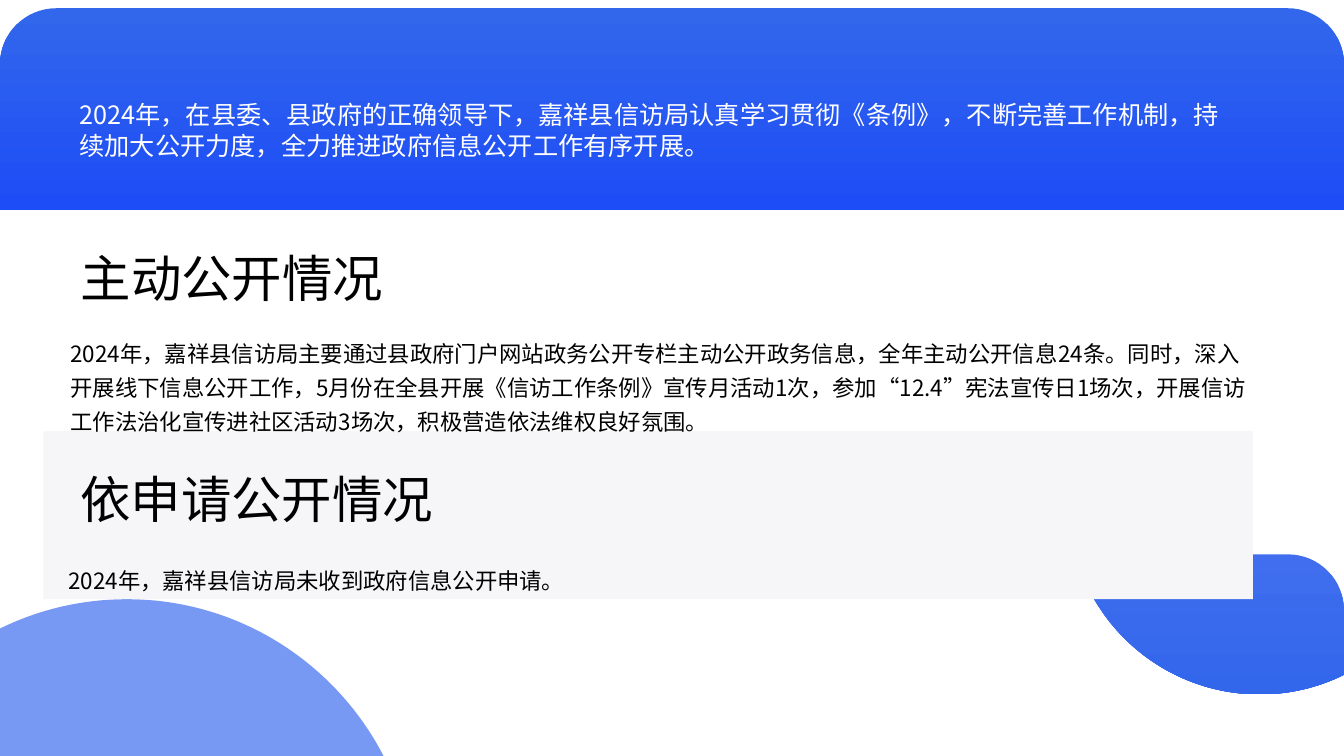
from itertools import chain

from lxml import etree
from pptx import Presentation
from pptx.dml.color import RGBColor
from pptx.enum.lang import MSO_LANGUAGE_ID as Language
from pptx.enum.shapes import MSO_SHAPE as Shape
from pptx.enum.text import MSO_ANCHOR as Anchor, MSO_AUTO_SIZE as AutoSize, PP_ALIGN as Align
from pptx.oxml.ns import qn
from pptx.util import Pt

WIDTH, HEIGHT = 960, 540
FONT = "Noto Sans CJK SC"
WHITE = RGBColor(0xFF, 0xFF, 0xFF)
BLACK = RGBColor(0x00, 0x00, 0x00)
PANEL = RGBColor(0xF6, 0xF6, 0xF9)
BLUE = RGBColor(0x32, 0x66, 0xEB)
DEEP_BLUE = RGBColor(0x1D, 0x4D, 0xF6)
SOFT_BLUE = RGBColor(0x40, 0x6E, 0xEE)

INTRO = "2024年，在县委、县政府的正确领导下，嘉祥县信访局认真学习贯彻《条例》，不断完善工作机制，持续加大公开力度，全力推进政府信息公开工作有序开展。"
ACTIVE_TITLE = "主动公开情况"
ACTIVE_TEXT = "2024年，嘉祥县信访局主要通过县政府门户网站政务公开专栏主动公开政务信息，全年主动公开信息24条。同时，深入开展线下信息公开工作，5月份在全县开展《信访工作条例》宣传月活动1次，参加“12.4”宪法宣传日1场次，开展信访工作法治化宣传进社区活动3场次，积极营造依法维权良好氛围。"
REQUEST_TITLE = "依申请公开情况"
REQUEST_TEXT = "2024年，嘉祥县信访局未收到政府信息公开申请。"


def add_outline(page, start, *segments):
    builder = page.shapes.build_freeform(*map(Pt, start))
    builder.add_line_segments([(Pt(x), Pt(y)) for x, y in chain(*segments)], close=True)
    outline = builder.convert_to_shape()
    bend_segments(outline, segments)
    outline.shadow.inherit = False
    outline.line.fill.background()
    return outline


def bend_segments(outline, segments):
    steps = iter(list(outline._element.iter(qn("a:lnTo"))))
    for segment in segments:
        group = [next(steps) for _ in segment]
        if len(group) == 3:
            bend = etree.Element(qn("a:cubicBezTo"))
            group[0].addprevious(bend)
            for step in group:
                bend.append(step[0])
                step.getparent().remove(step)


def fill_downward(shape, top, bottom):
    shape.fill.gradient()
    shape.fill.gradient_angle = 270
    for stop, color in zip(shape.fill.gradient_stops, (top, bottom)):
        stop.color.rgb = color


def fill_translucent(shape, color, percent):
    shape.fill.solid()
    shape.fill.fore_color.rgb = color
    srgb = shape.fill._xPr.find(".//" + qn("a:srgbClr"))
    etree.SubElement(srgb, qn("a:alpha")).set("val", str(percent * 1000))


def add_panel(page, left, top, width, height):
    panel = page.shapes.add_shape(Shape.RECTANGLE, Pt(left), Pt(top), Pt(width), Pt(height))
    panel.shadow.inherit = False
    panel.fill.solid()
    panel.fill.fore_color.rgb = PANEL
    panel.line.fill.background()


def write_text(box, text, size, spacing, color=BLACK, inset=(0, 0)):
    frame = box.text_frame
    frame.word_wrap = True
    frame.auto_size = AutoSize.NONE
    frame.vertical_anchor = Anchor.TOP
    frame.margin_left = frame.margin_right = Pt(inset[0])
    frame.margin_top = frame.margin_bottom = Pt(inset[1])
    para = frame.paragraphs[0]
    para.alignment = Align.LEFT
    para.line_spacing = Pt(spacing)
    para.space_before = Pt(0)
    span = para.add_run()
    span.text = text
    font = span.font
    font.size = Pt(size)
    font.name = FONT
    font.color.rgb = color
    font.language_id = Language.SIMPLIFIED_CHINESE
    etree.SubElement(font._element, qn("a:ea")).set("typeface", FONT)


def add_text(page, left, top, width, height, *content, **style):
    box = page.shapes.add_textbox(Pt(left), Pt(top), Pt(width), Pt(height))
    write_text(box, *content, **style)


def set_title(page, left, top, width, height, *content):
    title = page.shapes.title
    title.left, title.top, title.width, title.height = map(Pt, (left, top, width, height))
    write_text(title, *content)


def add_background(page):
    banner = add_outline(
        page,
        (0, 46),
        [(0, 23.8), (18, 5.9), (40.3, 5.9)],
        [(919.7, 5.9)],
        [(942, 5.9), (WIDTH, 23.8), (WIDTH, 46)],
        [(WIDTH, 150)],
        [(0, 150)],
    )
    fill_downward(banner, BLUE, DEEP_BLUE)

    bowl = add_outline(
        page,
        (768, 396),
        [(920, 396)],
        [(942.2, 396), (WIDTH, 414), (WIDTH, 436.3)],
        [(WIDTH, 482)],
        [(941.8, 491), (921.5, 496), (900, 496)],
        [(837, 496), (784, 453.6), (768, 396)],
    )
    fill_downward(bowl, SOFT_BLUE, BLUE)

    hill = add_outline(
        page,
        (274, HEIGHT),
        [(0, HEIGHT)],
        [(0, 449)],
        [(27.4, 435.5), (58.3, 428), (90.7, 428)],
        [(170.6, 428), (239.8, 473.8), (274, HEIGHT)],
    )
    fill_translucent(hill, SOFT_BLUE, 70)


def main():
    deck = Presentation()
    deck.slide_width, deck.slide_height = Pt(WIDTH), Pt(HEIGHT)
    page = deck.slides.add_slide(deck.slide_layouts[5])
    inset = (7.2, 3.6)
    add_background(page)
    set_title(page, 57.6, 170.6, 880, 60, ACTIVE_TITLE, 36, 49)
    add_panel(page, 31, 308, 864, 120)
    add_text(page, 50.4, 238.4, 845, 91.4, ACTIVE_TEXT, 16, 24)
    add_text(page, 49.7, 67.2, 845, 51, INTRO, 18, 22, color=WHITE, inset=inset)
    add_text(page, 50.2, 330.5, 400, 65.5, REQUEST_TITLE, 36, 43.8, inset=inset)
    add_text(page, 41.8, 401, 643, 45, REQUEST_TEXT, 16, 19.7, inset=inset)
    deck.save("out.pptx")


if __name__ == "__main__":
    main()
